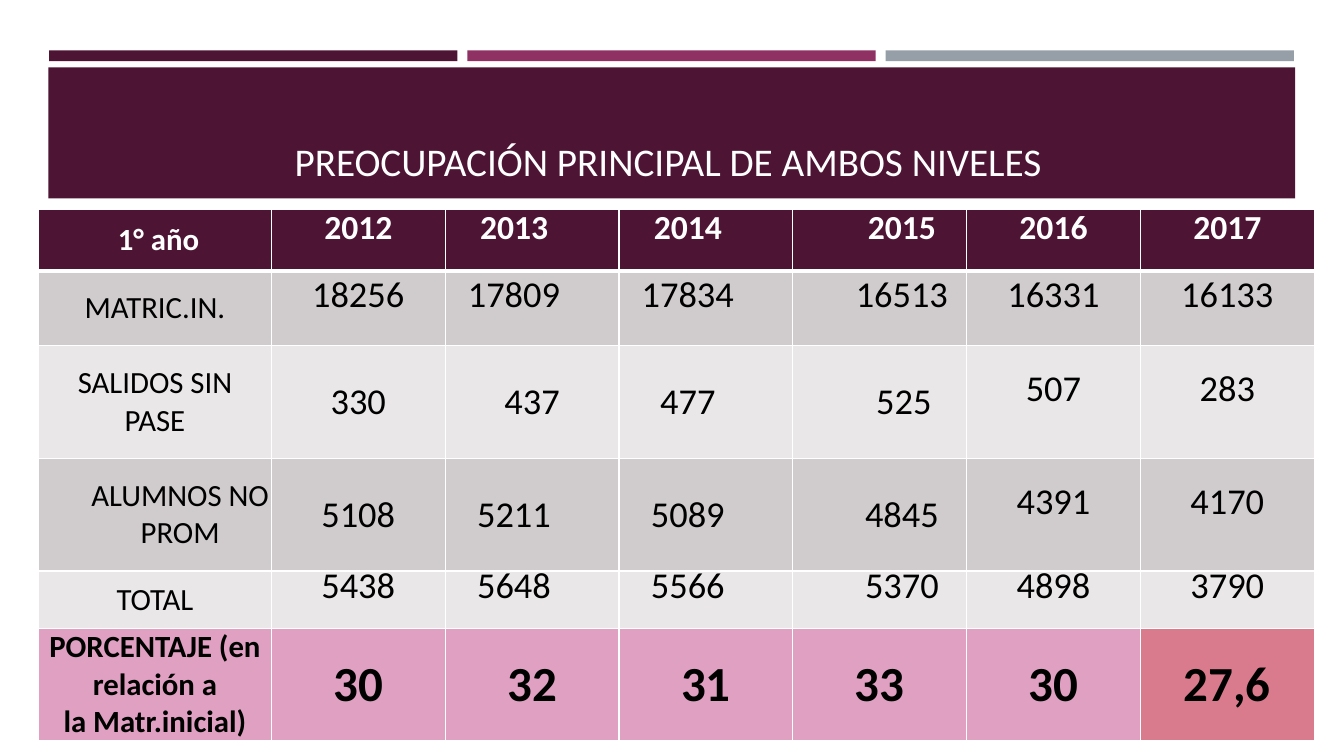
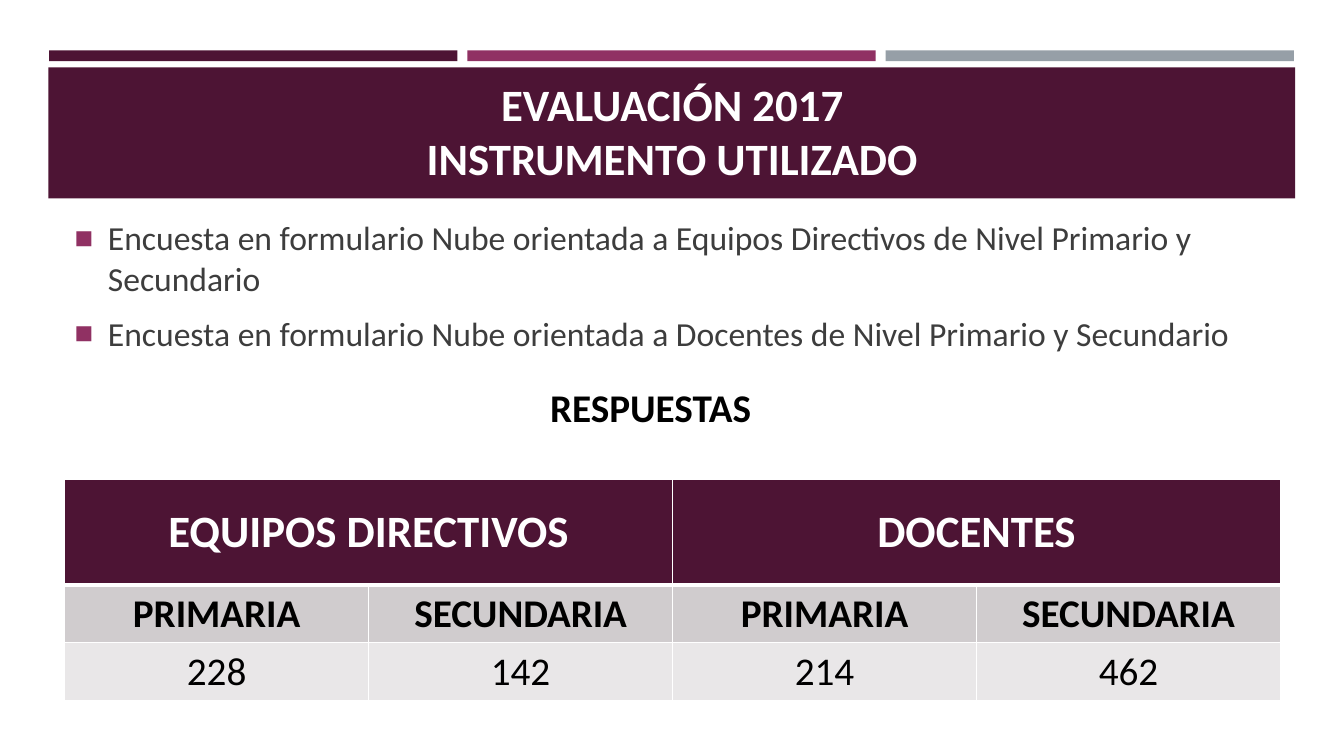
from dataclasses import dataclass

from lxml import etree
from pptx import Presentation
from pptx.dml.color import RGBColor
from pptx.enum.shapes import MSO_SHAPE as Shape
from pptx.enum.text import MSO_ANCHOR as Anchor, MSO_AUTO_SIZE as AutoSize, PP_ALIGN as Align
from pptx.oxml.ns import qn
from pptx.util import Cm, Pt

PLUM, MAGENTA, GREY = "4D1434", "903163", "969FA7"
WHITE, BLACK, BODY = "FFFFFF", "000000", "3D3D3D"
DARK_ROW, LIGHT_ROW, PINK, CORAL = "D0CCCE", "E9E7E8", "DFA0C1", "DA7B8D"
FONT = "Calibri"
TIGHT, LOOSE = 12.4, 13.2
FIRST_COLUMN, YEAR_COLUMN = 5.87, 4.38


def color(value):
    return RGBColor.from_string(value)


def add_xml(parent, tag, **attributes):
    return etree.SubElement(parent, qn(tag), attributes)


@dataclass
class YearRow:
    """One table row; leads are the line heights of the first four and last two years."""
    label: str
    values: tuple
    fill: str
    height: float
    size: int = 26
    bold: bool = False
    ink: str = BLACK
    leads: tuple = (None, None)
    label_shift: float = 0
    shifts: tuple = (0, -0.91, -0.91, 1.12, 0, 0)


class Report:
    def __init__(self):
        self.deck = Presentation()
        self.deck.slide_width, self.deck.slide_height = Cm(33.87), Cm(19.05)
        self.slide = None

    def add_slide(self, title, size, bold=False):
        self.slide = self.deck.slides.add_slide(self.deck.slide_layouts[5])
        for index, fill in enumerate((PLUM, MAGENTA, GREY)):
            self.band(1.24 + index * 10.54, 1.27, 10.29, 0.27, fill)
        self.band(1.22, 1.7, 31.42, 3.3, PLUM)
        box = self.slide.shapes.title
        box.left, box.top, box.width, box.height = Cm(1.63), Cm(1.96), Cm(30.63), Cm(2.82)
        box.element.getparent().append(box.element)  # in front of the bands
        frame = box.text_frame
        frame.auto_size = AutoSize.NONE
        frame.vertical_anchor = Anchor.BOTTOM
        self.set_text(frame, title, size, WHITE, bold)

    def band(self, left, top, width, height, fill):
        shape = self.slide.shapes.add_shape(
            Shape.RECTANGLE, Cm(left), Cm(top), Cm(width), Cm(height))
        shape.shadow.inherit = False
        shape.fill.solid()
        shape.fill.fore_color.rgb = color(fill)
        shape.line.fill.background()

    def set_text(self, frame, text, size, ink=BLACK, bold=False, align=Align.CENTER):
        frame.word_wrap = True
        frame.text = text
        for para in frame.paragraphs:
            para.alignment = align
            for span in para.runs:
                span.font.name = FONT
                span.font.size = Pt(size)
                span.font.bold = bold
                span.font.color.rgb = color(ink)

    def text(self, left, top, width, height, text, size, **style):
        box = self.slide.shapes.add_textbox(Cm(left), Cm(top), Cm(width), Cm(height))
        self.set_text(box.text_frame, text, size, **style)
        return box.text_frame

    def bullets(self, left, top, width, height, items, size):
        frame = self.text(left, top, width, height, "\n".join(items), size,
                          ink=BODY, align=Align.LEFT)
        for para in frame.paragraphs:
            para.space_after = Pt(10.8)
            props = para._p.get_or_add_pPr()
            props.set("marL", str(Cm(0.84)))
            props.set("indent", str(-Cm(0.84)))
            add_xml(add_xml(props, "a:buClr"), "a:srgbClr", val=MAGENTA)
            add_xml(props, "a:buSzPct", val="92000")
            add_xml(props, "a:buFont", typeface="Arial")
            add_xml(props, "a:buChar", char="■")

    def table(self, left, top, widths, heights):
        frame = self.slide.shapes.add_table(
            len(heights), len(widths), Cm(left), Cm(top), Cm(sum(widths)), Cm(sum(heights)))
        table = frame.table
        for column, width in zip(table.columns, widths):
            column.width = Cm(width)
        for row, height in zip(table.rows, heights):
            row.height = Cm(height)
        return table

    def cell(self, cell, text, size, fill, **style):
        self.set_text(cell.text_frame, text, size, **style)
        cell.vertical_anchor = Anchor.MIDDLE
        props = cell._tc.get_or_add_tcPr()
        for side in "LRTB":
            heavy = side == "B" and fill == PLUM
            line = add_xml(props, f"a:ln{side}", w=str(Pt(3 if heavy else 1)))
            add_xml(add_xml(line, "a:solidFill"), "a:srgbClr", val=WHITE)
        cell.fill.solid()
        cell.fill.fore_color.rgb = color(fill)

    def tight_cell(self, cell, text, size, fill, shift=0, **style):
        """Cell without margins whose centred text moves by half the shift."""
        self.cell(cell, text, size, fill, **style)
        cell.margin_top = cell.margin_bottom = 0
        cell.margin_left, cell.margin_right = Cm(max(shift, 0)), Cm(max(-shift, 0))

    def year_row(self, cells, row):
        style = dict(ink=row.ink, bold=row.bold)
        self.tight_cell(cells[0], row.label, 22, row.fill, row.label_shift, **style)
        leads = row.leads[:1] * 4 + row.leads[1:] * 2
        for cell, value, shift, lead in zip(cells[1:], row.values, row.shifts, leads):
            self.tight_cell(cell, value, row.size, row.fill, shift, **style)
            para = cell.text_frame.paragraphs[0]
            if lead:
                para.line_spacing = Pt(lead)
            else:
                para.space_before = Pt(6.5)


YEAR_ROWS = (
    YearRow("1° año", ("2012", "2013", "2014", "2015", "2016", "2017"), PLUM, 1.55,
            size=24, bold=True, ink=WHITE, leads=(TIGHT, TIGHT), label_shift=0.18),
    YearRow("MATRIC.IN.", ("18256", "17809", "17834", "16513", "16331", "16133"),
            DARK_ROW, 1.88, leads=(TIGHT, TIGHT)),
    YearRow("SALIDOS SIN\nPASE", ("330", "437", "477", "525", "507", "283"),
            LIGHT_ROW, 2.84, leads=(None, LOOSE), shifts=(0, 0, -0.91, 1.22, 0, 0)),
    YearRow("ALUMNOS NO\nPROM", ("5108", "5211", "5089", "4845", "4391", "4170"),
            DARK_ROW, 2.84, leads=(None, LOOSE), label_shift=1.27),
    YearRow("TOTAL", ("5438", "5648", "5566", "5370", "4898", "3790"),
            LIGHT_ROW, 1.45, leads=(TIGHT, TIGHT)),
    YearRow("PORCENTAJE (en relación a\nla Matr.inicial)",
            ("30", "32", "31", "33", "30", "27,6"), PINK, 2.82,
            size=35, bold=True, shifts=(0,) * 6),
)


def add_enrolment(report):
    report.add_slide("PREOCUPACIÓN PRINCIPAL DE AMBOS NIVELES ", 28)
    table = report.table(0.97, 5.28, [FIRST_COLUMN] + [YEAR_COLUMN] * 6,
                         [row.height for row in YEAR_ROWS])
    for table_row, row in zip(table.rows, YEAR_ROWS):
        report.year_row(list(table_row.cells), row)
    table.cell(5, 6).fill.fore_color.rgb = color(CORAL)


def add_survey(report):
    report.add_slide("EVALUACIÓN 2017\nINSTRUMENTO UTILIZADO", 32, bold=True)
    report.bullets(1.63, 5.35, 30.63, 4.1, (
        "Encuesta en formulario Nube orientada a Equipos Directivos de Nivel Primario y Secundario",
        "Encuesta en formulario Nube orientada a Docentes de Nivel Primario y Secundario"), 24)
    table = report.table(1.63, 12.07, [7.66] * 4, [2.67, 1.46, 1.46])
    for column, heading in ((0, "EQUIPOS DIRECTIVOS"), (2, "DOCENTES")):
        table.cell(0, column).merge(table.cell(0, column + 1))
        report.cell(table.cell(0, column), heading, 32, PLUM, ink=WHITE, bold=True)
    levels = ("PRIMARIA", "SECUNDARIA") * 2
    for column, (level, count) in enumerate(zip(levels, ("228", "142", "214", "462"))):
        report.cell(table.cell(1, column), level, 28, DARK_ROW, bold=True)
        report.cell(table.cell(2, column), count, 28, LIGHT_ROW)
    report.text(9.22, 9.53, 14.35, 1.45, "RESPUESTAS", 28, bold=True)


def main():
    report = Report()
    add_enrolment(report)
    add_survey(report)
    report.deck.save("out.pptx")


if __name__ == "__main__":
    main()
